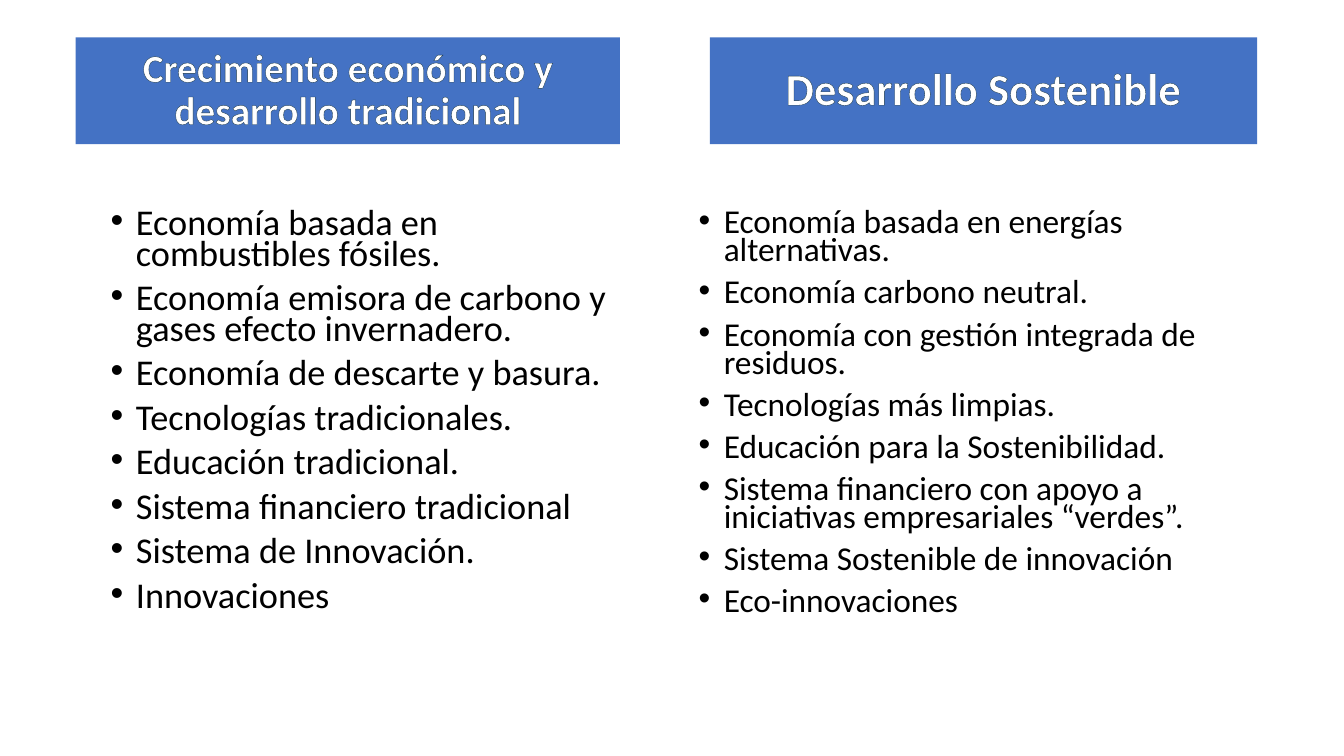
"""Build a slide that sets old growth beside green growth in two columns."""
from dataclasses import dataclass

from lxml import etree
from pptx import Presentation
from pptx import util as u
from pptx.dml.color import RGBColor
from pptx.enum import shapes, text
from pptx.oxml.ns import qn

PX = 9144


@dataclass(frozen=True)
class Theme:
    font: str = "Calibri"
    fill: str = "4472C4"
    light: str = "FFFFFF"
    dark: str = "000000"
    edge: str = "19374B"
    edge_pt: float = 0.75
    gap_pt: int = 10


@dataclass(frozen=True)
class Box:
    left: int
    top: int
    width: int
    height: int

    def scaled(self) -> list[int]:
        return [side * PX for side in (self.left, self.top, self.width, self.height)]


@dataclass(frozen=True)
class Column:
    title: str
    title_pt: float
    head: Box
    points: tuple[str, ...]
    point_pt: float
    body: Box


THEME = Theme()
HEAD_TOP, HEAD_H = 37, 106
BODY_TOP, BODY_H = 205, 436
INDENT = 25

COLUMNS = (
    Column(
        "Crecimiento económico y desarrollo tradicional", 28,
        Box(75, HEAD_TOP, 540, HEAD_H),
        (
            "Economía basada en combustibles fósiles.",
            "Economía emisora de carbono y gases efecto invernadero.",
            "Economía de descarte y basura.",
            "Tecnologías tradicionales.",
            "Educación tradicional.",
            "Sistema financiero tradicional",
            "Sistema de Innovación.",
            "Innovaciones",
        ), 25.9,
        Box(100, BODY_TOP, 540, BODY_H),
    ),
    Column(
        "Desarrollo Sostenible", 32,
        Box(704, HEAD_TOP, 543, HEAD_H),
        (
            "Economía basada en energías alternativas.",
            "Economía carbono neutral.",
            "Economía con gestión integrada de residuos.",
            "Tecnologías más limpias.",
            "Educación para la Sostenibilidad.",
            "Sistema financiero con apoyo a iniciativas empresariales “verdes”.",
            "Sistema Sostenible de innovación",
            "Eco-innovaciones",
        ), 23.8,
        Box(683, BODY_TOP, 562, BODY_H),
    ),
)


def apply(target, values: dict) -> None:
    for name, value in values.items():
        setattr(target, name, value)


def add_run(para, words: str, size: float, color: str, bold: bool = False):
    run = para.add_run()
    run.text = words
    apply(run.font, {"name": THEME.font, "size": u.Pt(size), "bold": bold})
    run.font.color.rgb = RGBColor.from_string(color)
    return run


def add_edge(run) -> None:
    line = etree.Element(qn("a:ln"), w=str(u.Pt(THEME.edge_pt)))
    fill = etree.SubElement(line, qn("a:solidFill"))
    etree.SubElement(fill, qn("a:srgbClr"), val=THEME.edge)
    run.font._element.insert(0, line)


def add_bullet(para) -> None:
    props = para._p.get_or_add_pPr()
    props.set("marL", str(INDENT * PX))
    props.set("indent", str(-INDENT * PX))
    etree.SubElement(props, qn("a:buFont"), typeface="Arial")
    etree.SubElement(props, qn("a:buChar"), char="•")


def draw_head(slide, col: Column) -> None:
    head = slide.shapes.add_shape(shapes.MSO_SHAPE.RECTANGLE, *col.head.scaled())
    head.shadow.inherit = False
    head.fill.solid()
    head.fill.fore_color.rgb = RGBColor.from_string(THEME.fill)
    head.line.fill.background()
    frame = head.text_frame
    apply(frame, {"word_wrap": True, "vertical_anchor": text.MSO_ANCHOR.MIDDLE})
    para = frame.paragraphs[0]
    apply(para, {"alignment": text.PP_ALIGN.CENTER, "line_spacing": 0.9})
    add_edge(add_run(para, col.title, col.title_pt, THEME.light, bold=True))


def draw_body(slide, col: Column) -> None:
    frame = slide.shapes.add_textbox(*col.body.scaled()).text_frame
    frame.word_wrap = True
    for i, point in enumerate(col.points):
        para = frame.add_paragraph() if i else frame.paragraphs[0]
        add_bullet(para)
        apply(para, {"line_spacing": 0.7, "space_before": u.Pt(THEME.gap_pt if i else 0)})
        add_run(para, point, col.point_pt, THEME.dark)


def main() -> None:
    deck = Presentation()
    apply(deck, {"slide_width": 1333 * PX, "slide_height": 750 * PX})
    slide = deck.slides.add_slide(deck.slide_layouts[6])
    for col in COLUMNS:
        draw_head(slide, col)
        draw_body(slide, col)
    deck.save("out.pptx")


if __name__ == "__main__":
    main()
